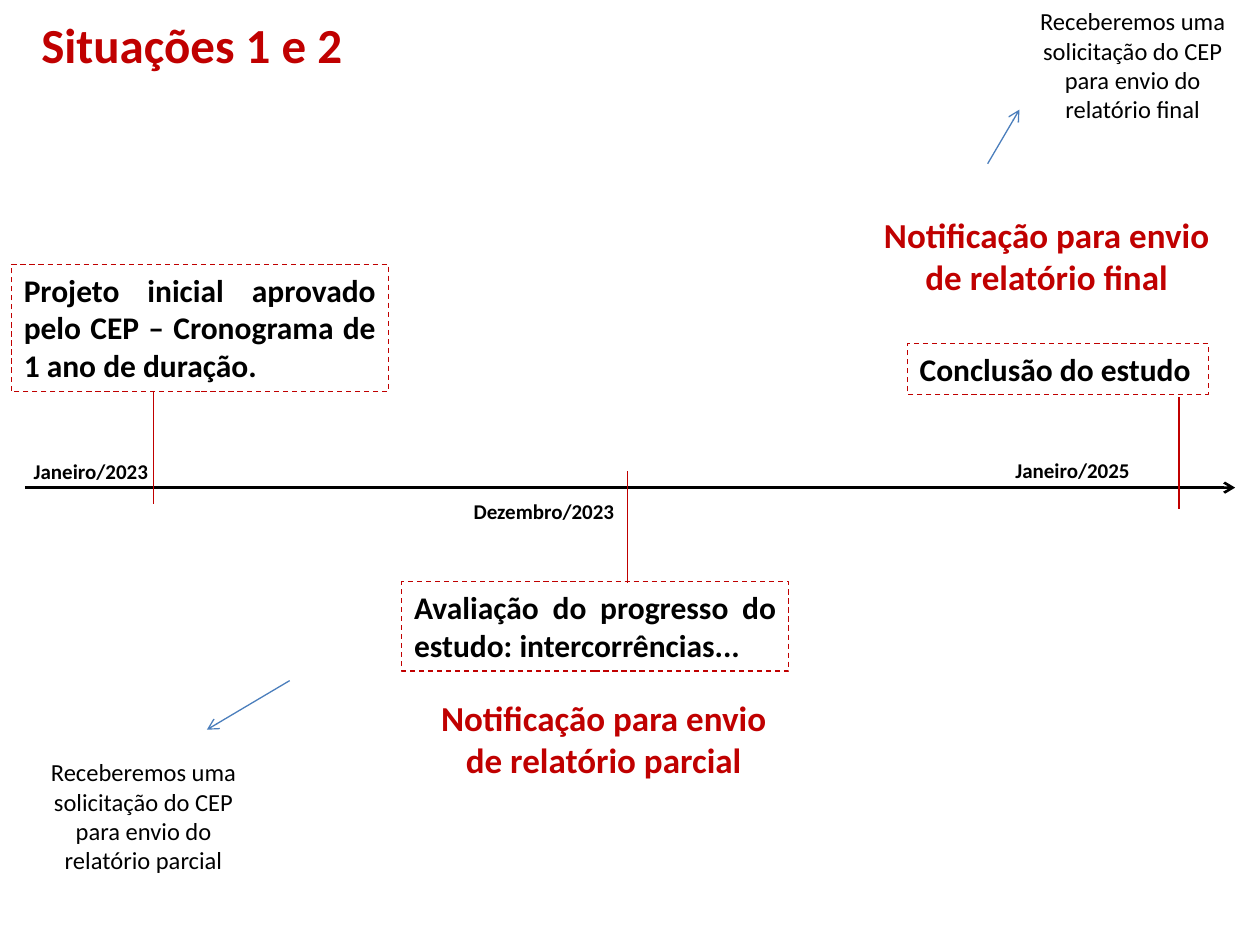
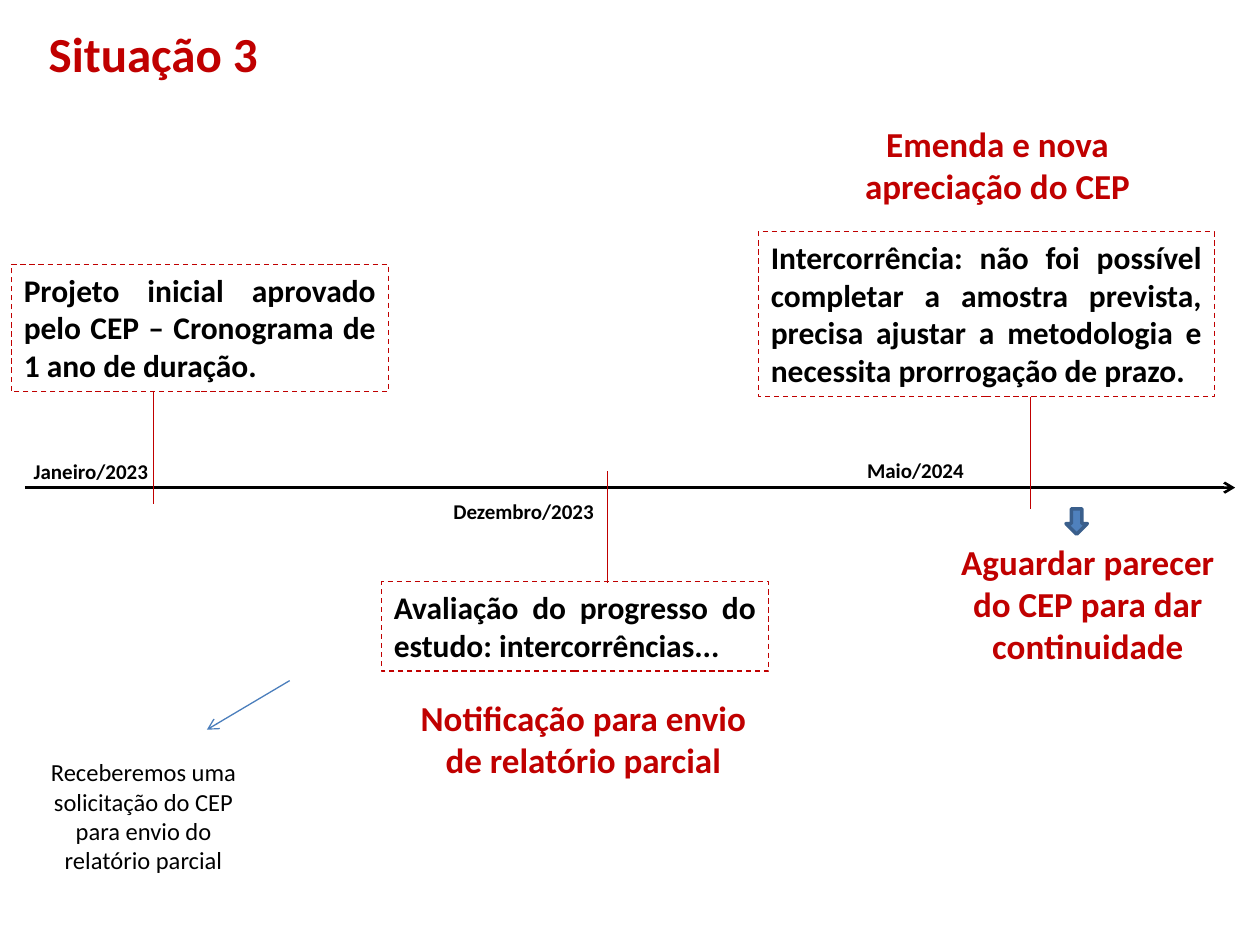
from lxml import etree
from pptx import Presentation
from pptx import util as u
from pptx.dml import color
from pptx.enum import dml, shapes, text
from pptx.oxml import ns

RED, BLACK, BLUE = "C00000", "000000", "4B7EBC"
CENTER, JUSTIFY = text.PP_ALIGN.CENTER, text.PP_ALIGN.JUSTIFY


def rgb(value):
    return color.RGBColor.from_string(value)


class Deck:
    font = "Calibri"

    def __init__(self):
        self.prs = Presentation()
        self.prs.slide_width, self.prs.slide_height = u.Cm(25.4), u.Cm(19.05)
        self.s = None

    def new_slide(self, title, y, w):
        self.s = self.prs.slides.add_slide(self.prs.slide_layouts[5])
        sp = self.s.shapes.title
        sp.left, sp.top, sp.width, sp.height = map(u.Cm, (0.1, y, w, 1.35))
        self.add_words(sp, title, 28, RED, True, CENTER)
        p = sp.text_frame.paragraphs[0]
        p.line_spacing, p.space_before = 0.9, u.Pt(20)

    def add_words(self, sp, words, size, ink, bold, align):
        tf = sp.text_frame
        tf.word_wrap = True
        tf.auto_size = text.MSO_AUTO_SIZE.SHAPE_TO_FIT_TEXT
        tf.vertical_anchor = text.MSO_ANCHOR.TOP
        p = tf.paragraphs[0]
        p.alignment = align
        r = p.add_run()
        r.text = words
        r.font.name, r.font.size, r.font.bold = self.font, u.Pt(size), bold
        r.font.color.rgb = rgb(ink)

    def textbox(self, words, x, y, w, h, size, ink=BLACK, bold=True, align=CENTER):
        sp = self.s.shapes.add_textbox(*map(u.Cm, (x, y, w, h)))
        self.add_words(sp, words, size, ink, bold, align)

    def date(self, words, x, y, w):
        self.textbox(words, x, y, w, 0.76, 12, align=text.PP_ALIGN.LEFT)

    def notice(self, words, x, y, w=7.6, h=1.96):
        self.textbox(words, x, y, w, h, 20, RED)

    def request(self, report, x, y):
        words = f"Receberemos uma solicitação do CEP para envio do relatório {report}"
        self.textbox(words, x, y, 4.37, 2.64, 14, bold=False)

    def shape(self, kind, x, y, w, h, ink, width):
        sp = self.s.shapes.add_shape(kind, *map(u.Cm, (x, y, w, h)))
        sp.shadow.inherit = False
        sp.line.color.rgb, sp.line.width = rgb(ink), u.Pt(width)
        return sp

    def event(self, words, x, y, w, h):
        sp = self.shape(shapes.MSO_SHAPE.RECTANGLE, x, y, w, h, RED, 0.75)
        sp.fill.background()
        sp.line.dash_style = dml.MSO_LINE.DASH
        self.add_words(sp, words, 18, BLACK, True, JUSTIFY)

    def down_arrow(self, x, y, w, h):
        sp = self.shape(shapes.MSO_SHAPE.DOWN_ARROW, x, y, w, h, "3A5F8C", 2)
        sp.fill.solid()
        sp.fill.fore_color.rgb = rgb("4F81BD")

    def line(self, x1, y1, x2, y2, ink=RED, width=0.75, arrow=False):
        cx = self.s.shapes.add_connector(
            shapes.MSO_CONNECTOR.STRAIGHT, *map(u.Cm, (x1, y1, x2, y2)))
        cx.line.color.rgb, cx.line.width = rgb(ink), u.Pt(width)
        sp_pr = cx._element.spPr
        if arrow:
            ln = sp_pr.find(ns.qn("a:ln"))
            etree.SubElement(ln, ns.qn("a:tailEnd"), type="arrow")
        etree.SubElement(sp_pr, ns.qn("a:effectLst"))

    def timeline(self, middle, end, end_date):
        self.line(0.5, 9.83, 24.9, 9.83, BLACK, 1.5, arrow=True)

        self.event("Projeto inicial aprovado pelo CEP – Cronograma de 1 ano de duração.",
                   0.23, 5.33, 7.6, 2.57)
        self.line(3.1, 7.9, 3.1, 10.16)
        self.date("Janeiro/2023", 0.43, 9.12, 3)

        self.line(middle, 9.5, middle, 11.76)
        self.event("Avaliação do progresso do estudo: intercorrências...",
                   middle - 4.55, 11.73, 7.8, 1.8)
        self.date("Dezembro/2023", middle - 3.35, 9.93, 4)
        self.notice("Notificação para envio de relatório parcial",
                    middle - 4.34, 13.92, 7.72)

        self.line(end, 8, end, 10.26)
        self.date(end_date, end - 3.55, 9.09, 3.48)

        self.line(5.84, 13.72, 4.17, 14.71, BLUE, arrow=True)
        self.request("parcial", 0.71, 15.14)


def main():
    d = Deck()

    d.new_slide("Situações 1 e 2 ", 0.3, 7.75)
    d.timeline(12.65, 23.77, "Janeiro/2025")
    d.event("Conclusão do estudo", 18.29, 6.93, 6.07, 1.02)
    d.notice("Notificação para envio de relatório final", 17.3, 4.17)
    d.line(19.91, 3.3, 20.55, 2.21, BLUE, arrow=True)
    d.request("final", 20.65, 0)

    d.new_slide("Situação 3 ", 0.48, 6.2)
    d.timeline(12.24, 20.78, "Maio/2024")
    d.event("Intercorrência: não foi possível completar a amostra prevista, "
            "precisa ajustar a metodologia e necessita prorrogação de prazo.",
            15.29, 4.67, 9.19, 3.33)
    d.notice("Emenda e nova apreciação do CEP", 16.31, 2.34)
    d.notice("Aguardar parecer do CEP para dar continuidade", 18.97, 10.77, 5.92, 2.82)
    d.down_arrow(21.49, 10.26, 0.43, 0.51)

    d.prs.save("out.pptx")


if __name__ == "__main__":
    main()
